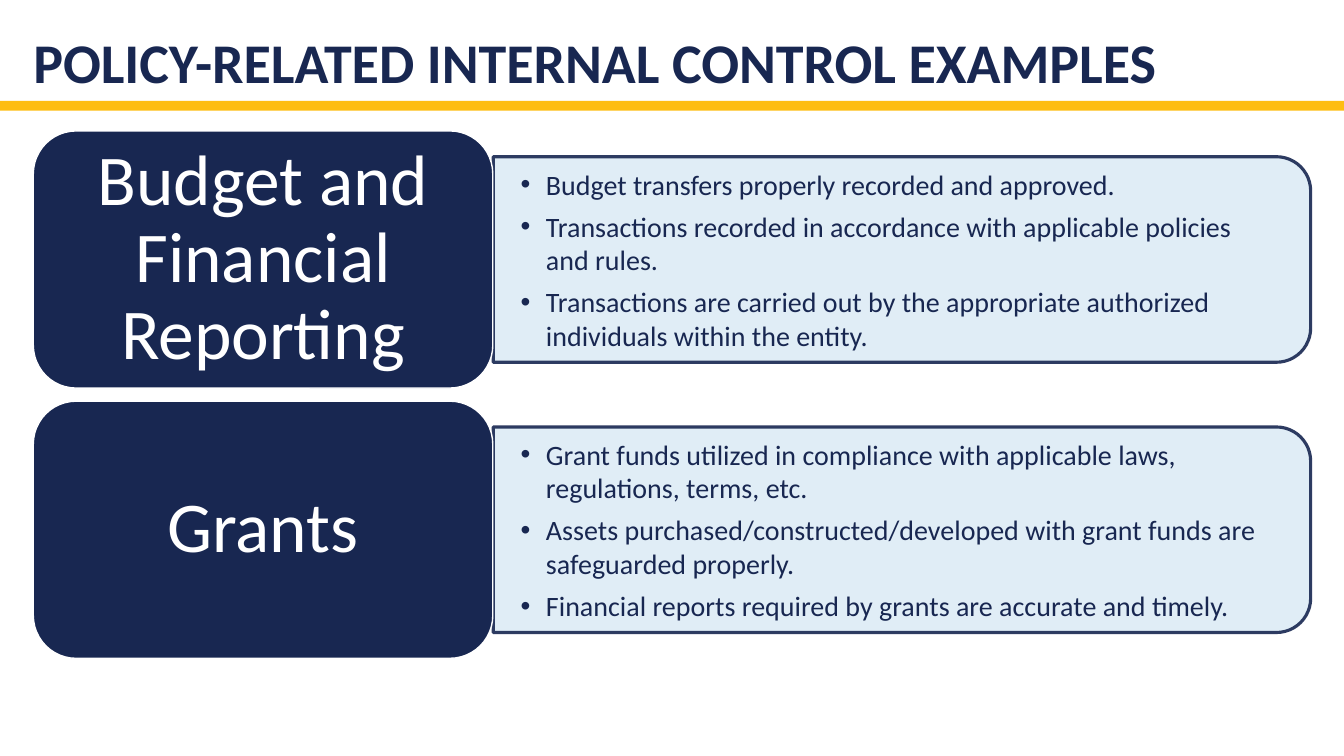
from pptx import Presentation
from pptx.util import Cm, Pt
from pptx.dml.color import RGBColor
from pptx.enum.shapes import MSO_SHAPE
from pptx.enum.text import MSO_ANCHOR, PP_ALIGN
from lxml.etree import SubElement
from pptx.oxml.ns import qn

NAVY = RGBColor(0x18, 0x27, 0x51)
GOLD = RGBColor(0xFE, 0xBD, 0x11)
PALE = RGBColor(0xDD, 0xEC, 0xF6)
WHITE = RGBColor(0xFF, 0xFF, 0xFF)

TOPICS = [
    ("Budget and Financial Reporting", [
        "Budget transfers properly recorded and approved.",
        "Transactions recorded in accordance with applicable policies and rules.",
        "Transactions are carried out by the appropriate authorized individuals within the entity.",
    ]),
    ("Grants", [
        "Grant funds utilized in compliance with applicable laws, regulations, terms, etc.",
        "Assets purchased/constructed/developed with grant funds are safeguarded properly.",
        "Financial reports required by grants are accurate and timely.",
    ]),
]
TOP, PITCH = 3.3, 6.81
LEFT, LABEL_W, LABEL_H = 0.84, 11.58, 6.48
CARD_X, CARD_W, CARD_H = 12.43, 20.6, 5.18
TEXT_W, TEXT_H = 20.35, 4.67


def add_block(kind, x, y, w, h, fill):
    block = slide.shapes.add_shape(kind, Cm(x), Cm(y), Cm(w), Cm(h))
    block.shadow.inherit = False
    block.fill.solid()
    block.fill.fore_color.rgb = fill
    return block


def set_frame(frame, side, edge, anchor):
    """Set wrapping, insets in cm and the vertical anchor."""
    frame.word_wrap = True
    frame.margin_left = frame.margin_right = Cm(side)
    frame.margin_top = frame.margin_bottom = Cm(edge)
    frame.vertical_anchor = anchor


deck = Presentation()
deck.slide_width, deck.slide_height = Cm(33.87), Cm(19.05)
slide = deck.slides.add_slide(deck.slide_layouts[5])

bar = add_block(MSO_SHAPE.RECTANGLE, 0, 2.54, 33.87, 0.25, GOLD)
bar.line.fill.background()

title = slide.shapes.title
title.left, title.top = Cm(LEFT), Cm(0)
title.width, title.height = Cm(32.18), Cm(2.54)
title.text_frame.text = "POLICY-RELATED INTERNAL CONTROL EXAMPLES"
set_frame(title.text_frame, 0, 0.13, MSO_ANCHOR.BOTTOM)
para = title.text_frame.paragraphs[0]
para.alignment = PP_ALIGN.LEFT
para.line_spacing = 0.9
font = para.runs[0].font
font.name, font.size, font.bold = "Calibri", Pt(40), True
font.color.rgb = NAVY

for row, (topic, points) in enumerate(TOPICS):
    top = TOP + row * PITCH
    mid = top + LABEL_H / 2

    # The card is a tall shape turned on its side, rounded at the right
    card = add_block(MSO_SHAPE.ROUND_2_SAME_RECTANGLE,
                     CARD_X + (CARD_W - CARD_H) / 2, mid - CARD_W / 2,
                     CARD_H, CARD_W, PALE)
    card.rotation = 90
    card.line.color.rgb = NAVY
    card.line.width = Pt(2.25)
    for color in card._element.spPr.iter(qn("a:srgbClr")):
        SubElement(color, qn("a:alpha"), val="90000")

    box = slide.shapes.add_textbox(Cm(CARD_X), Cm(mid - TEXT_H / 2),
                                   Cm(TEXT_W), Cm(TEXT_H))
    set_frame(box.text_frame, 0.69, 0.36, MSO_ANCHOR.MIDDLE)
    box.text_frame.text = "\n".join(points)
    for para in box.text_frame.paragraphs:
        para.level = 1
        para.space_after = Pt(6)
        props = para._p.get_or_add_pPr()
        props.set("marL", str(Cm(0.64)))
        props.set("indent", str(-Cm(0.64)))
        SubElement(props, qn("a:buFont"), typeface="Arial")
        SubElement(props, qn("a:buChar"), char="•")
        font = para.runs[0].font
        font.name, font.size = "Calibri", Pt(20)
        font.color.rgb = NAVY

    label = add_block(MSO_SHAPE.ROUNDED_RECTANGLE, LEFT, top,
                      LABEL_W, LABEL_H, NAVY)
    label.line.color.rgb = WHITE
    label.line.width = Pt(1)
    label.text_frame.text = topic
    set_frame(label.text_frame, 0.53, 0.28, MSO_ANCHOR.MIDDLE)
    para = label.text_frame.paragraphs[0]
    para.alignment = PP_ALIGN.CENTER
    para.line_spacing = 0.9
    font = para.runs[0].font
    font.name, font.size = "Calibri", Pt(51)
    font.color.rgb = WHITE

deck.save("out.pptx")
